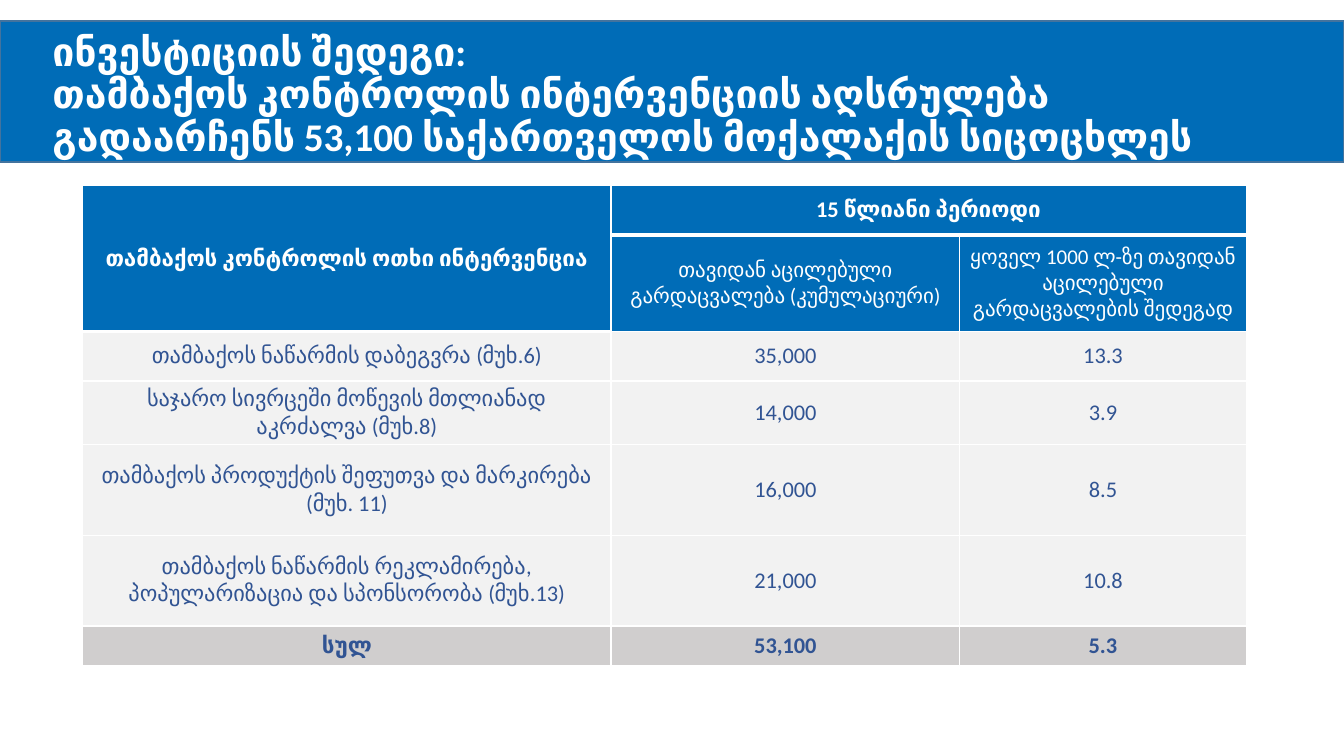
from dataclasses import dataclass

from lxml.etree import SubElement as Sub
from pptx import Presentation
from pptx.dml.color import RGBColor as RGB
from pptx.enum.shapes import MSO_SHAPE as Shape
from pptx.enum.text import MSO_ANCHOR as Anchor, MSO_AUTO_SIZE as Fit, PP_ALIGN as Align
from pptx.oxml.ns import qn
from pptx.util import Inches, Pt

HUES = {
    "blue": "006CB7",
    "edge": "43739E",
    "white": "FFFFFF",
    "ink": "315493",
    "pale": "F2F2F2",
    "gray": "D0CECE",
}
TITLE = ("ინვესტიციის შედეგი: \vთამბაქოს კონტროლის ინტერვენციის აღსრულება "
         "გადაარჩენს 53,100 საქართველოს მოქალაქის სიცოცხლეს")
WIDTHS = [5.24, 3.46, 2.84]


@dataclass
class Look:
    fill: str
    ink: str
    size: int
    bold: bool


@dataclass
class Row:
    high: float
    look: Look
    texts: tuple[str, str, str]


HEAD = Look("blue", "white", 16, True)
SUB = Look("blue", "white", 15, False)
BODY = Look("pale", "ink", 16, False)
TOTAL = Look("gray", "ink", 16, True)

ROWS = [
    Row(0.49, HEAD, ("თამბაქოს კონტროლის ოთხი ინტერვენცია", "15 წლიანი პერიოდი", "")),
    Row(0.96, SUB, ("", "თავიდან აცილებული გარდაცვალება (კუმულაციური)",
                    "ყოველ 1000 ლ-ზე თავიდან აცილებული გარდაცვალების შედეგად")),
    Row(0.49, BODY, ("თამბაქოს ნაწარმის დაბეგვრა (მუხ.6)", "35,000", "13.3")),
    Row(0.63, BODY, ("საჯარო სივრცეში მოწევის მთლიანად აკრძალვა (მუხ.8)", "14,000", "3.9")),
    Row(0.9, BODY, ("თამბაქოს პროდუქტის შეფუთვა და მარკირება (მუხ. 11)", "16,000", "8.5")),
    Row(0.9, BODY, ("თამბაქოს ნაწარმის რეკლამირება, პოპულარიზაცია და სპონსორობა (მუხ.13)",
                    "21,000", "10.8")),
    Row(0.39, TOTAL, ("სულ", "53,100", "5.3")),
]


def hue(name: str) -> RGB:
    return RGB.from_string(HUES[name])


def style(frame, size: int, ink: str, bold: bool, align: Align) -> None:
    for para in frame.paragraphs:
        para.alignment = align
        for run in para.runs:
            font = run.font
            font.name, font.size, font.bold = "Calibri", Pt(size), bold
            font.color.rgb = hue(ink)


def border(cell, top: int, base: int) -> None:
    """Draw white cell edges; top and base are widths in points."""
    props = cell._tc.get_or_add_tcPr()
    for side, width in (("L", 1), ("R", 1), ("T", top), ("B", base)):
        line = Sub(props, qn(f"a:ln{side}"), w=str(Pt(width)))
        Sub(Sub(line, qn("a:solidFill")), qn("a:srgbClr"), val=HUES["white"])


def add_band(slide) -> None:
    band = slide.shapes.add_shape(
        Shape.RECTANGLE, 0, Inches(0.21), Inches(13.33), Inches(1.4))
    band.shadow.inherit = False
    band.fill.solid()
    band.fill.fore_color.rgb = hue("blue")
    band.line.color.rgb = hue("edge")
    band.line.width = Pt(1)
    slide.shapes._spTree.insert(2, band._element)  # behind the title


def set_title(slide) -> None:
    title = slide.shapes.title
    title.left, title.top = Inches(0.42), Inches(0.23)
    title.width, title.height = Inches(12.34), Inches(1.45)
    frame = title.text_frame
    frame.text = TITLE
    frame.word_wrap = True
    frame.auto_size = Fit.NONE
    frame.vertical_anchor = Anchor.MIDDLE
    frame.paragraphs[0].line_spacing = 0.9
    style(frame, 28, "white", True, Align.LEFT)


def fill_cell(cell, text: str, look: Look) -> None:
    cell.fill.solid()
    cell.fill.fore_color.rgb = hue(look.fill)
    cell.margin_left = cell.margin_right = Inches(0.07)
    cell.margin_top = cell.margin_bottom = Inches(0.04)
    cell.vertical_anchor = Anchor.MIDDLE
    cell.text_frame.text = text
    style(cell.text_frame, look.size, look.ink, look.bold, Align.CENTER)


def add_grid(slide) -> None:
    table = slide.shapes.add_table(
        len(ROWS), len(WIDTHS), Inches(0.82), Inches(1.84),
        Inches(sum(WIDTHS)), Inches(sum(row.high for row in ROWS))).table
    for col, width in zip(table.columns, WIDTHS):
        col.width = Inches(width)
    for r, row in enumerate(ROWS):
        table.rows[r].height = Inches(row.high)
        for c, text in enumerate(row.texts):
            cell = table.cell(r, c)
            split = 2 if c == 0 else 1  # row under the thick rule
            border(cell, 3 if r == split else 1, 3 if r in (0, split - 1) else 1)
            fill_cell(cell, text, row.look)
    table.cell(0, 0).merge(table.cell(1, 0))
    table.cell(0, 1).merge(table.cell(0, 2))


def main() -> None:
    deck = Presentation()
    deck.slide_width, deck.slide_height = Inches(13.33), Inches(7.5)
    slide = deck.slides.add_slide(deck.slide_layouts[5])
    add_band(slide)
    set_title(slide)
    add_grid(slide)
    deck.save("out.pptx")


if __name__ == "__main__":
    main()
